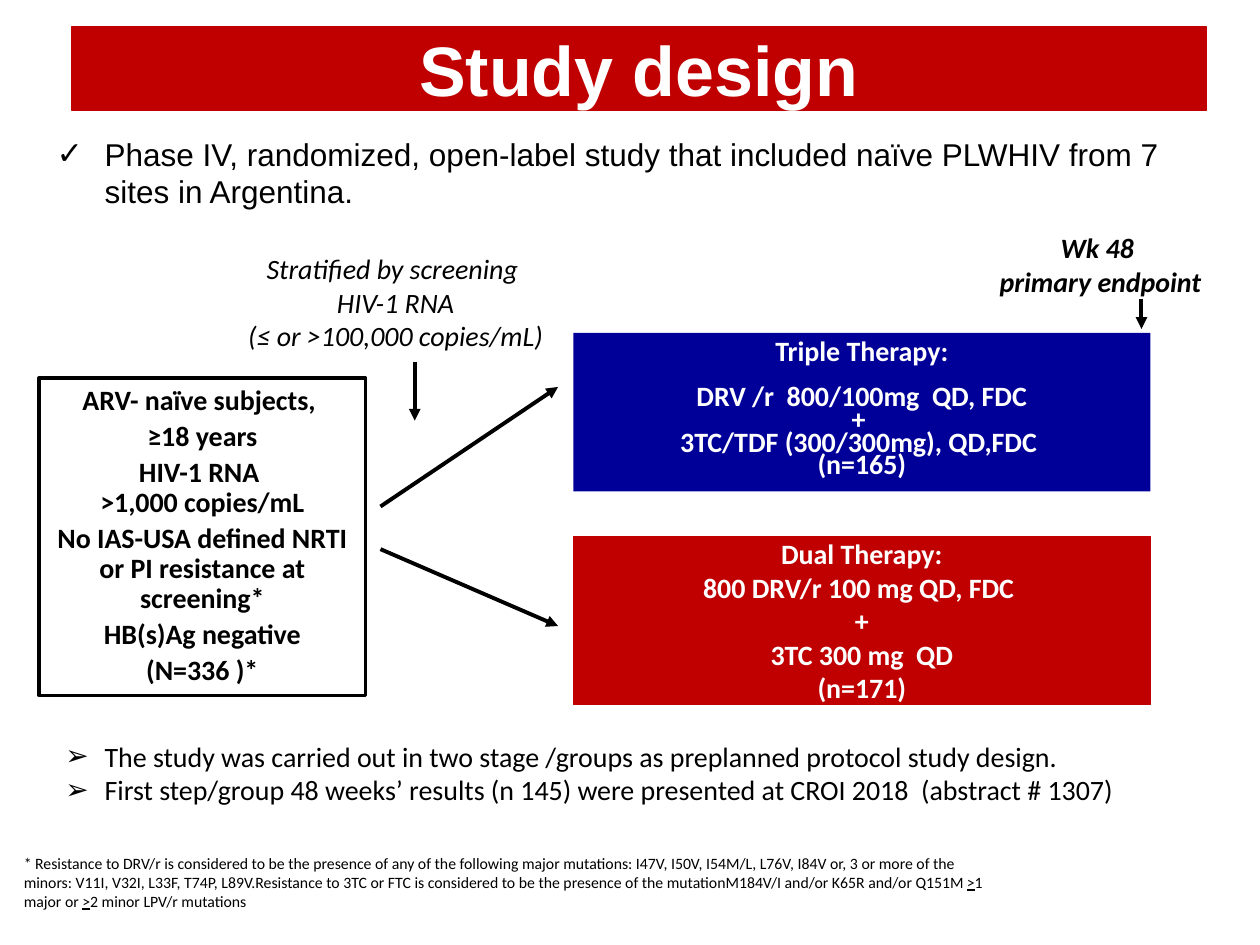
import pptx
import pptx.util
import pptx.dml.color
import pptx.enum.shapes
import pptx.enum.text
import pptx.oxml
import pptx.oxml.ns
import lxml.etree

Cm, Pt = pptx.util.Cm, pptx.util.Pt
ALIGN = pptx.enum.text.PP_ALIGN
ANCHOR = pptx.enum.text.MSO_ANCHOR

THEME = {
    "red": "C00000", "blue": "000099", "black": "000000", "white": "FFFFFF",
    "head": "Arial", "body": "Calibri",
    "title": 40, "lead": 18, "text": 16, "note": 9,
}

TITLE = ["Study design"]
LEAD = ["Phase IV, randomized, open-label study that included naïve PLWHIV from 7 sites in Argentina."]
DUAL = ["Dual Therapy:", "800 DRV/r 100 mg QD, FDC ", "+", "3TC 300 mg  QD", "(n=171)"]
TRIPLE = ["Triple Therapy:", "DRV /r  800/100mg  QD, FDC", "+ ",
          "3TC/TDF (300/300mg), QD,FDC ", "(n=165)"]
SUBJECTS = ["ARV- naïve subjects, ", "≥18 years", "HIV-1 RNA \n>1,000 copies/mL",
            "No IAS-USA defined NRTI or PI resistance at screening*",
            "HB(s)Ag negative", "(N=336 )*"]
STRATA = ["Stratified by screening \n HIV-1 RNA ", "(≤ or >100,000 copies/mL)"]
ENDPOINT = ["Wk 48 \nprimary endpoint"]
STAGES = ["The study was carried out in two stage /groups as preplanned protocol study design.",
          "First step/group 48 weeks’ results (n 145) were presented at CROI 2018  (abstract # 1307)"]
FOOTNOTE = [[
    ("* Resistance to DRV/r is considered to be the presence of any of the following major "
     "mutations: I47V, I50V, I54M/L, L76V, I84V or, 3 or more of the minors: V11I, V32I, L33F, "
     "T74P, L89V.Resistance to 3TC or FTC is considered to be the presence of the "
     "mutationM184V/I and/or K65R and/or Q151M ", False),
    (">", True), ("1 major or ", False), (">", True), ("2 minor LPV/r mutations", False),
]]

ARROWS = [
    ((7.67, 10.21), (11.25, 7.8)),
    ((7.67, 11.07), (11.25, 12.62)),
    ((8.36, 7.29), (8.36, 8.48)),
    ((23.01, 6.02), (23.01, 6.63)),
]


def rgb(name):
    return pptx.dml.color.RGBColor.from_string(THEME[name])


def add_bullet(p, char, indent):
    pPr = p._p.get_or_add_pPr()
    pPr.set("marL", str(Cm(indent)))
    pPr.set("indent", str(-Cm(indent)))
    for tag, key, value in (("a:buFont", "typeface", "Arial"), ("a:buChar", "char", char)):
        lxml.etree.SubElement(pPr, pptx.oxml.ns.qn(tag)).set(key, value)


def write(s, paragraphs, size="text", font="body", color="black", bold=False, italic=False,
          align=ALIGN.CENTER, anchor=ANCHOR.TOP, wrap=True, bullet=None,
          spacing=None, before=()):
    tf = s.text_frame
    tf.auto_size = pptx.enum.text.MSO_AUTO_SIZE.NONE
    tf.word_wrap = wrap
    tf.vertical_anchor = anchor
    for i, runs in enumerate(paragraphs):
        p = tf.add_paragraph() if i else tf.paragraphs[0]
        if bullet:
            add_bullet(p, *bullet)
        p.alignment = align
        p.space_before = Pt(before[i] if i < len(before) else 0)
        if spacing:
            p.line_spacing = spacing
        for text, underline in [(runs, False)] if isinstance(runs, str) else runs:
            for n, line in enumerate(text.split("\n")):
                if n:
                    p.add_line_break()
                r = p.add_run()
                r.text = line
                r.font.name = THEME[font]
                r.font.size = Pt(THEME[size])
                r.font.bold = bold
                r.font.italic = italic
                r.font.underline = underline
                r.font.color.rgb = rgb(color)


def paint(s, fill, line=None, width=0.75):
    s.fill.solid()
    s.fill.fore_color.rgb = rgb(fill)
    if line:
        s.line.color.rgb = rgb(line)
        s.line.width = Pt(width)
    else:
        s.line.fill.background()


def add_box(slide, at, paragraphs, fill, line=None, width=0.75, **style):
    s = slide.shapes.add_shape(pptx.enum.shapes.MSO_SHAPE.RECTANGLE, *map(Cm, at))
    s.shadow.inherit = False
    paint(s, fill, line, width)
    write(s, paragraphs, bold=True, anchor=ANCHOR.MIDDLE, **style)


def add_text(slide, at, paragraphs, **style):
    write(slide.shapes.add_textbox(*map(Cm, at)), paragraphs, **style)


def add_arrow(slide, start, end):
    s = slide.shapes.add_connector(pptx.enum.shapes.MSO_CONNECTOR.STRAIGHT,
                                   *map(Cm, start + end))
    s.line.color.rgb = rgb("black")
    s.line.width = Pt(2.25)
    ln = s.line._get_or_add_ln()
    lxml.etree.SubElement(ln, pptx.oxml.ns.qn("a:tailEnd")).set("type", "triangle")
    lxml.etree.SubElement(s._element.spPr, pptx.oxml.ns.qn("a:effectLst"))


def main():
    prs = pptx.Presentation()
    prs.slide_width, prs.slide_height = Cm(25.4), Cm(19.05)
    slide = prs.slides.add_slide(prs.slide_layouts[5])

    title = slide.shapes.title
    title.left, title.top, title.width, title.height = map(Cm, (1.45, 0.53, 22.86, 1.7))
    paint(title, "red", "red")
    write(title, TITLE, size="title", font="head", color="white", bold=True,
          anchor=ANCHOR.MIDDLE)

    add_text(slide, (0.89, 2.59, 23.95, 2.11), LEAD, size="lead", font="head",
             align=ALIGN.LEFT, bullet=("✓", 0.97))
    add_box(slide, (11.56, 10.82, 11.63, 3.38), DUAL, "red", "red", color="white", wrap=False)
    add_box(slide, (11.56, 6.71, 11.63, 3.2), TRIPLE, "blue", color="white", wrap=False,
            spacing=Pt(13), before=(0, 13))
    add_box(slide, (0.79, 7.62, 6.58, 6.4), SUBJECTS, "white", "black", 2,
            spacing=0.9, before=[0] + [3.2] * (len(SUBJECTS) - 1))
    for start, end in ARROWS:
        add_arrow(slide, start, end)
    add_text(slide, (4.24, 4.95, 7.47, 2.31), STRATA, italic=True)
    add_text(slide, (19.66, 4.52, 5.05, 1.63), ENDPOINT, bold=True, italic=True,
             anchor=ANCHOR.MIDDLE)
    add_text(slide, (0.23, 17.09, 20.14, 1.42), FOOTNOTE, size="note", align=ALIGN.LEFT)
    add_text(slide, (1.07, 14.78, 23.24, 1.63), STAGES, align=ALIGN.JUSTIFY,
             bullet=("➢", 0.79))

    prs.save("out.pptx")


if __name__ == "__main__":
    main()
